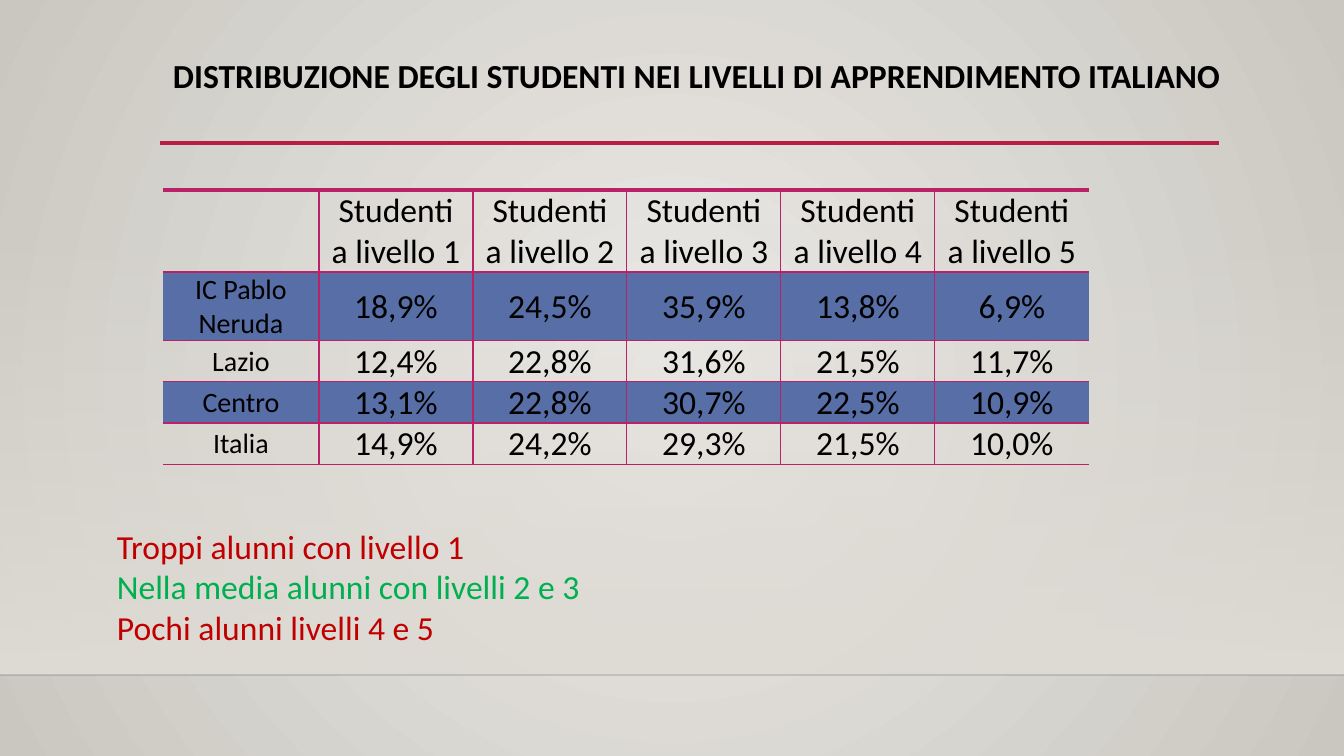
from lxml import etree
from pptx import Presentation
from pptx.dml.color import RGBColor
from pptx.enum import shapes, text
from pptx.oxml.ns import qn
from pptx.util import Emu, Pt

TITLE = "DISTRIBUZIONE DEGLI STUDENTI NEI LIVELLI DI APPRENDIMENTO ITALIANO"
HEADER = ("",) + tuple(f"Studenti\na livello {level}" for level in range(1, 6))
RESULTS = [
    ("IC Pablo Neruda", "18,9%", "24,5%", "35,9%", "13,8%", "6,9%"),
    ("Lazio", "12,4%", "22,8%", "31,6%", "21,5%", "11,7%"),
    ("Centro", "13,1%", "22,8%", "30,7%", "22,5%", "10,9%"),
    ("Italia", "14,9%", "24,2%", "29,3%", "21,5%", "10,0%"),
]

BLACK = RGBColor(0x00, 0x00, 0x00)
RED = RGBColor(0xC0, 0x00, 0x00)
GREEN = RGBColor(0x00, 0xB0, 0x50)
CRIMSON = RGBColor(0xB7, 0x1E, 0x42)
MAGENTA = RGBColor(0xBA, 0x21, 0x69)
BLUE = RGBColor(0x58, 0x6E, 0xA6)
WALL = RGBColor(0xDF, 0xDB, 0xD5)
GLOW = RGBColor(0xEC, 0xEA, 0xE7)
EDGE = RGBColor(0xCA, 0xC7, 0xC1)

COMMENTS = [
    ("Troppi alunni con livello 1", RED),
    ("Nella media alunni con livelli 2 e 3", GREEN),
    ("Pochi alunni livelli 4 e 5", RED),
]

WIDTH, HEIGHT = 1344, 756
FLOOR = 675
COLUMNS = [156] + [154] * 5
ROWS = [82, 68, 41, 41, 41]


def px(length):
    return Emu(round(length * 914400 / 100.8))


def add_element(parent, tag, **attributes):
    element = etree.SubElement(parent, qn(tag))
    for name, value in attributes.items():
        element.set(name, str(value))
    return element


def set_gradient(fill, colors):
    fill.gradient()
    for stop, color in zip(fill.gradient_stops, colors):
        stop.color.rgb = color


def paint_background(page):
    set_gradient(page.background.fill, (GLOW, EDGE))
    gradient = next(page.background._cSld.iter(qn("a:gradFill")))
    gradient.remove(gradient.find(qn("a:lin")))
    circle = add_element(gradient, "a:path", path="circle")
    add_element(circle, "a:fillToRect", l=50000, t=50000, r=50000, b=50000)


def paint_wall(page):
    """Band that fades in from clear at the top to solid at the floor."""
    wall = page.shapes.add_shape(shapes.MSO_SHAPE.RECTANGLE, 0, px(223), px(WIDTH), px(FLOOR - 223))
    wall.shadow.inherit = False
    wall.line.fill.background()
    set_gradient(wall.fill, (WALL, WALL))
    wall.fill.gradient_angle = 270
    add_element(next(wall._element.iter(qn("a:srgbClr"))), "a:alpha", val=0)


def add_rule(page, left, right, y, color, points):
    rule = page.shapes.add_connector(shapes.MSO_CONNECTOR.STRAIGHT, px(left), px(y), px(right), px(y))
    rule.line.color.rgb = color
    rule.line.width = Pt(points)
    add_element(rule._element.spPr, "a:effectLst")
    return rule


def set_font(paragraph, size, color, bold=False):
    font = paragraph.font
    font.name, font.size, font.bold = "Calibri", Pt(size), bold
    font.color.rgb = color


def set_borders(cell, **points):
    """Border widths by side (L, R, T, B); zero means no line."""
    properties = cell._tc.get_or_add_tcPr()
    for index, (side, width) in enumerate(points.items()):
        border = etree.Element(qn(f"a:ln{side}"), w=str(Pt(width)))
        if width:
            add_element(add_element(border, "a:solidFill"), "a:srgbClr", val=MAGENTA)
        else:
            add_element(border, "a:noFill")
        properties.insert(index, border)


def add_results(page):
    rows = [HEADER] + RESULTS
    table = page.shapes.add_table(len(rows), len(HEADER), px(163), px(190),
                                  px(sum(COLUMNS)), px(sum(ROWS))).table
    for column, width in zip(table.columns, COLUMNS):
        column.width = px(width)
    for row, height in zip(table.rows, ROWS):
        row.height = px(height)
    last = len(HEADER) - 1
    for r, values in enumerate(rows):
        for c, value in enumerate(values):
            cell = table.cell(r, c)
            cell.vertical_anchor = text.MSO_ANCHOR.MIDDLE
            cell.margin_left = cell.margin_right = cell.margin_top = px(1)
            cell.margin_bottom = 0
            if r % 2:
                cell.fill.solid()
                cell.fill.fore_color.rgb = BLUE
            else:
                cell.fill.background()
            set_borders(cell, L=1 if c else 0, R=1 if c < last else 0, T=1 if r else 3, B=1)
            paragraph = cell.text_frame.paragraphs[0]
            paragraph.text = value
            paragraph.alignment = text.PP_ALIGN.CENTER
            set_font(paragraph, 24 if c else 20, BLACK)


def add_text(page, left, top, width, height, lines, bold=False):
    box = page.shapes.add_textbox(px(left), px(top), px(width), px(height))
    frame = box.text_frame
    frame.word_wrap = True
    for index, (line, color) in enumerate(lines):
        paragraph = frame.add_paragraph() if index else frame.paragraphs[0]
        paragraph.text = line
        set_font(paragraph, 24, color, bold)
    return frame


def main():
    deck = Presentation()
    deck.slide_width, deck.slide_height = px(WIDTH), px(HEIGHT)
    page = deck.slides.add_slide(deck.slide_layouts[6])
    paint_background(page)
    paint_wall(page)
    floor = add_rule(page, 0, WIDTH, FLOOR, BLACK, 1)
    add_element(next(floor._element.iter(qn("a:srgbClr"))), "a:alpha", val=20000)
    add_rule(page, 160, 1219, 143, CRIMSON, 2.5)

    title = add_text(page, 163, 55, 1236, 46, [(TITLE, BLACK)], bold=True)
    title.vertical_anchor = text.MSO_ANCHOR.MIDDLE
    title.paragraphs[0].line_spacing = 0.9
    add_results(page)
    comments = add_text(page, 107, 521, 924, 132, COMMENTS)
    comments.auto_size = text.MSO_AUTO_SIZE.SHAPE_TO_FIT_TEXT
    deck.save("out.pptx")


if __name__ == "__main__":
    main()
